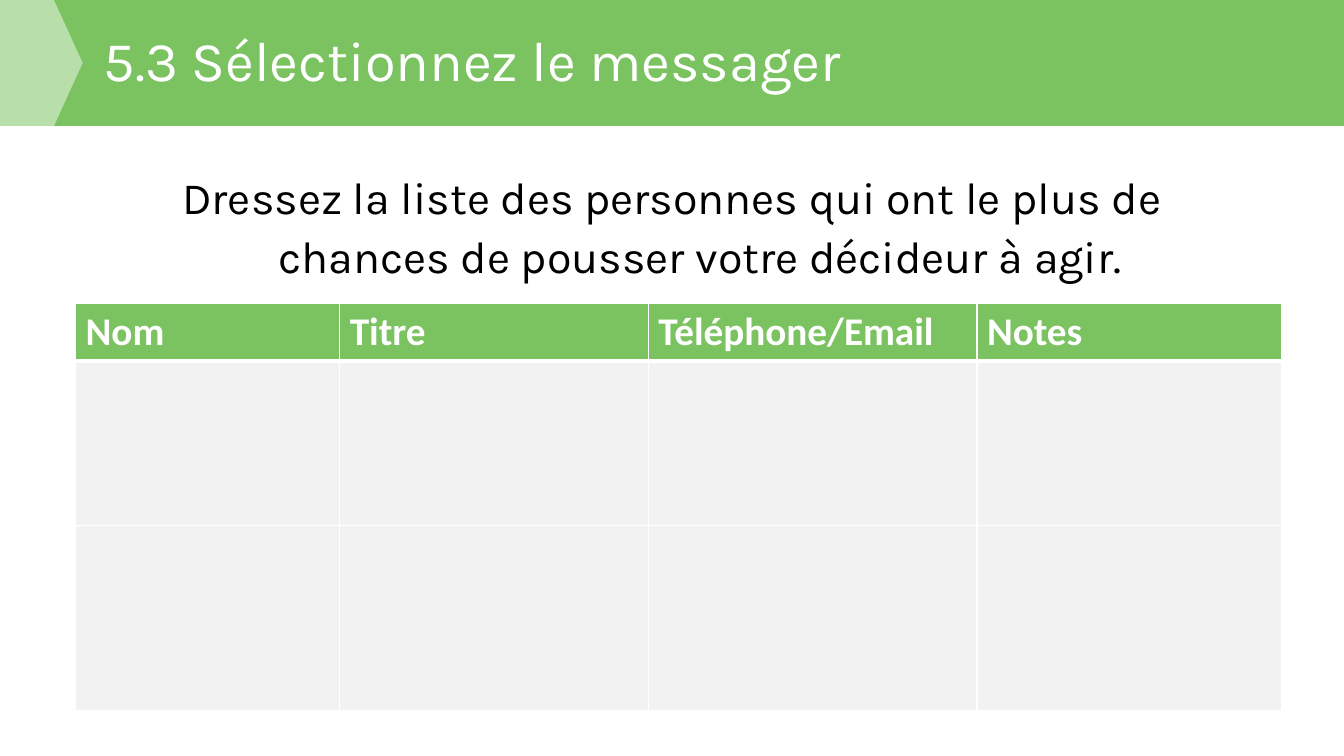
from lxml import etree
from pptx import Presentation, util as u
from pptx.dml.color import RGBColor
from pptx.enum import shapes, text
from pptx.oxml import ns

GREEN = RGBColor(0x7A, 0xC3, 0x60)
GREY = RGBColor(0xF2, 0xF2, 0xF2)
WHITE = RGBColor(0xFF, 0xFF, 0xFF)
BLACK = RGBColor(0, 0, 0)
BAND_H = 1.25
HEADERS = ["Nom", "Titre", "Téléphone/Email", "Notes"]
COL_WIDTHS = [2.62, 3.06, 3.26, 3.02]
ROW_HEIGHTS = [0.57, 1.63, 1.84]

prs = Presentation()
prs.slide_width, prs.slide_height = u.Inches(13.33), u.Inches(7.5)
s = prs.slides.add_slide(prs.slide_layouts[6])

# Title band with its pale arrow
for kind, width, color in [
    (shapes.MSO_SHAPE.RECTANGLE, 13.33, GREEN),
    (shapes.MSO_SHAPE.PENTAGON, 0.82, WHITE),
]:
    sp = s.shapes.add_shape(kind, 0, 0, u.Inches(width), u.Inches(BAND_H))
    sp.shadow.inherit = False
    sp.fill.solid()
    sp.fill.fore_color.rgb = color
    sp.line.fill.background()
sp.adjustments[0] = 0.348
clr = sp.fill._xPr.find(".//" + ns.qn("a:srgbClr"))
etree.SubElement(clr, ns.qn("a:alpha"), val="47000")

# Title and instruction
for words, box, size, color, spacing, anchor in [
    ("5.3 Sélectionnez le messager", (0.93, 0.2, 10.58, 0.86),
     40, WHITE, 0.9, text.MSO_ANCHOR.MIDDLE),
    ("Dressez la liste des personnes qui ont le plus de chances de pousser "
     "votre décideur à agir.", (0.92, 1.58, 11.5, 1.4),
     32, BLACK, 1.1, text.MSO_ANCHOR.TOP),
]:
    tf = s.shapes.add_textbox(*map(u.Inches, box)).text_frame
    tf.word_wrap = True
    tf.vertical_anchor = anchor
    tf.text = words
    p = tf.paragraphs[0]
    p.line_spacing = spacing
    r = p.runs[0]
    r.font.name, r.font.size = "Karla", u.Pt(size)
    r.font.color.rgb = color
p.alignment = text.PP_ALIGN.CENTER
pPr = p._p.get_or_add_pPr()
pPr.set("marL", str(u.Inches(0.56)))
pPr.set("indent", str(u.Inches(-0.56)))

# Contact table
table = s.shapes.add_table(
    len(ROW_HEIGHTS), len(HEADERS), u.Inches(0.75), u.Inches(3.01),
    u.Inches(sum(COL_WIDTHS)), u.Inches(sum(ROW_HEIGHTS))).table
table.horz_banding = False
for column, width in zip(table.columns, COL_WIDTHS):
    column.width = u.Inches(width)
for i, (row, height) in enumerate(zip(table.rows, ROW_HEIGHTS)):
    row.height = u.Inches(height)
    for cell, header in zip(row.cells, HEADERS):
        widths = {"lnL": 1, "lnR": 1, "lnT": 3 if i == 1 else 1,
                  "lnB": 3 if i == 0 else 1}
        tcPr = cell._tc.get_or_add_tcPr()
        for side, points in widths.items():
            ln = etree.SubElement(tcPr, ns.qn("a:" + side), w=str(u.Pt(points)))
            fill = etree.SubElement(ln, ns.qn("a:solidFill"))
            etree.SubElement(fill, ns.qn("a:srgbClr"), val=str(WHITE))
        cell.fill.solid()
        cell.fill.fore_color.rgb = GREY if i else GREEN
        if i == 0:
            cell.text = header
            r = cell.text_frame.paragraphs[0].runs[0]
            r.font.name, r.font.size, r.font.bold = "Calibri", u.Pt(28), True
            r.font.color.rgb = WHITE

prs.save("out.pptx")
